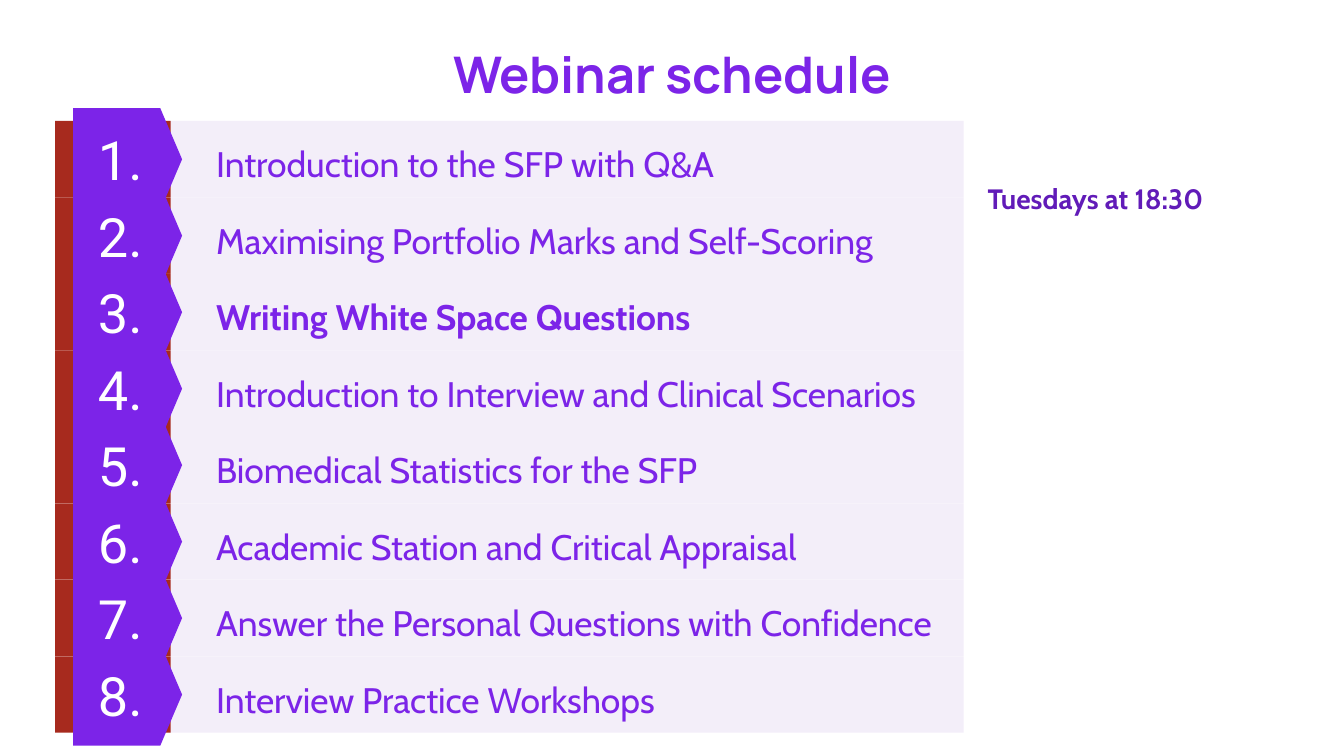
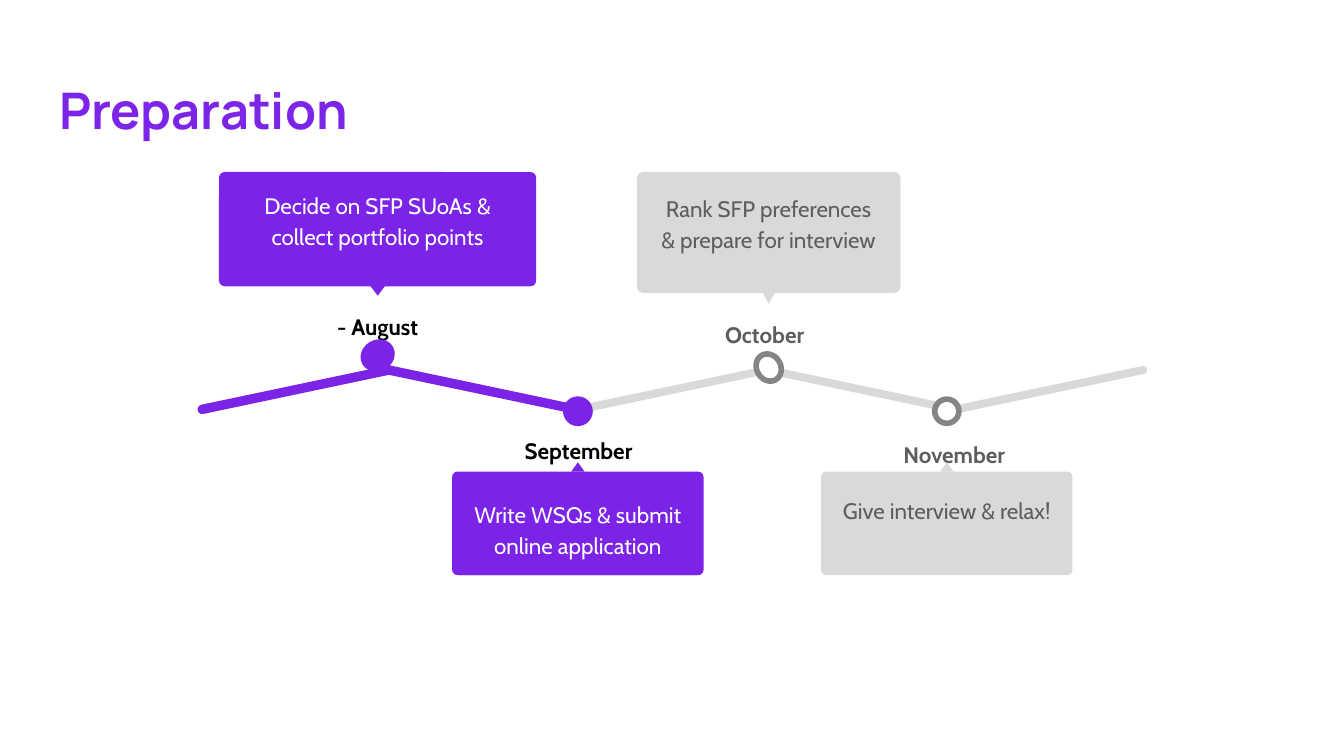
"""Build the webinar schedule and the preparation timeline slides."""
from pptx import Presentation
from pptx import util as u
from pptx.dml.color import RGBColor
from pptx.enum import shapes, text


class Theme:
    purple, accent, deep = "7C24E8", "7B23E7", "611BB8"
    pale, red, white = "F3EEF9", "A72A1E", "FFFFFF"
    light, ring, grey, black = "D9D9D9", "858585", "5E5E5E", "000000"
    head, body, digits = "Manrope", "Cabin", "Roboto"
    title_pt, number_pt, item_pt, note_pt, small_pt = 27, 29, 19, 15, 12


T = Theme
SHAPE = shapes.MSO_SHAPE
LEFT, CENTER = text.PP_ALIGN.LEFT, text.PP_ALIGN.CENTER
TOP, MIDDLE = text.MSO_ANCHOR.TOP, text.MSO_ANCHOR.MIDDLE

prs = Presentation()
prs.slide_width = u.Inches(10)
prs.slide_height = prs.slide_width * 9 // 16
UNIT = prs.slide_width / 100


def add(s, kind, col, row, cols, rows, fill=None, line=None, pt=0, rot=0):
    """Place a preset shape, or a text box when kind is None, on the grid."""
    at = [round(n * UNIT) for n in (col, row, cols, rows)]
    if kind is None:
        return s.shapes.add_textbox(*at)
    sp = s.shapes.add_shape(kind, *at)
    sp.shadow.inherit = False
    sp.rotation = rot
    sp.fill.solid()
    sp.fill.fore_color.rgb = RGBColor.from_string(fill)
    if line:
        sp.line.color.rgb = RGBColor.from_string(line)
        sp.line.width = u.Pt(pt)
    else:
        sp.line.fill.background()
    return sp


def write(sp, words, font, pt, color, bold=False, align=CENTER, anchor=TOP,
          spacing=None, after=None):
    """Fill a shape with one formatted paragraph."""
    tf = sp.text_frame
    tf.text = words
    tf.word_wrap = True
    tf.auto_size = text.MSO_AUTO_SIZE.NONE
    tf.vertical_anchor = anchor
    tf.margin_left = tf.margin_right = tf.margin_top = tf.margin_bottom = u.Inches(0.1)
    p = tf.paragraphs[0]
    p.alignment = align
    if spacing:
        p.line_spacing = spacing
    if after is not None:
        p.space_after = u.Pt(after)
    r = p.runs[0]
    r.font.name, r.font.size, r.font.bold = font, u.Pt(pt), bold
    r.font.color.rgb = RGBColor.from_string(color)


slides = []
for words, row, align in (("Webinar schedule", 2.2, CENTER), ("Preparation", 4.9, LEFT)):
    s = prs.slides.add_slide(prs.slide_layouts[5])
    sp = s.shapes.title
    sp.left, sp.top, sp.width, sp.height = [round(n * UNIT) for n in (3.4, row, 93.2, 6.8)]
    write(sp, words, T.head, T.title_pt, T.purple, True, align)
    slides.append(s)
schedule, preparation = slides

webinars = [
    "Introduction to the SFP with Q&A",
    "Maximising Portfolio Marks and Self-Scoring",
    "Writing White Space Questions",
    "Introduction to Interview and Clinical Scenarios",
    "Biomedical Statistics for the SFP",
    "Academic Station and Critical Appraisal",
    "Answer the Personal Questions with Confidence",
    "Interview Practice Workshops",
]
current = 2
first_row, pitch = 9, 5.69
for i in [*range(4, 8), *range(4)]:
    row = first_row + i * pitch
    add(schedule, SHAPE.RECTANGLE, 8, row, 63.7, pitch, T.pale)
    add(schedule, SHAPE.RECTANGLE, 4.1, row, 8.6, pitch, T.red)
    add(schedule, SHAPE.FLOWCHART_OFFPAGE_CONNECTOR, 5.7, row - 1.2, 7.6, 8.1, T.purple, rot=270)
    sp = add(schedule, SHAPE.RECTANGLE, 5.8, row + 0.7, 6.3, 4.3, T.purple)
    write(sp, f"{i + 1}.", T.digits, T.number_pt, T.white, anchor=MIDDLE)
    sp = add(schedule, None, 15.1, row + 0.1, 56.6, pitch)
    write(sp, webinars[i], T.body, T.item_pt, T.purple, i == current, LEFT, MIDDLE, 1.15, 12)

sp = add(schedule, None, 72.5, 12.5, 23.1, 5.7)
write(sp, "Tuesdays at 18:30", T.body, T.note_pt, T.deep, True, LEFT)

for col, tilt, done in ((70.7, -11.9, False), (56.7, 11.9, False), (42.7, -11.9, False),
                        (28.5, 11.9, True), (14.6, -11.9, True)):
    sp = add(preparation, SHAPE.ROUNDED_RECTANGLE, col, 28.7, 14.8, 0.6,
             T.accent if done else T.light, T.accent if done else None, 0.75, tilt % 360)
    sp.adjustments[0] = 0.5

months = [
    ("November", "Give interview & relax!", False, 70.45, (71, 31.5, 11.2, 3.7),
     (35.1, 18.7, 7.7), (35.7, 17.8, 6.8), (34.4, 1, 0.7, 0), (29.7, 1.8, 1.8)),
    ("October", "Rank SFP preferences & prepare for interview", False, 57.2, (56.9, 22.6, 8.6, 3.4),
     (12.8, 19.6, 9), (13.2, 18.6, 8), (21.7, 1, 0.9, 180), (26.3, 1.8, 2.1)),
    ("September", "Write WSQs & submit online application", True, 43, (43.05, 31.2, 10.5, 3.7),
     (35.1, 18.7, 7.7), (36, 17.8, 6.8), (34.4, 1, 0.7, 0), (29.7, 1.8, 1.8)),
    ("- August", "Decide on SFP SUoAs & collect portfolio points", True, 28.1, (28.1, 22, 9.6, 3.3),
     (12.8, 23.6, 8.5), (13, 22.4, 7), (21.2, 1.2, 0.8, 180), (25.5, 2.2, 1.9)),
]
for month, task, done, mid, label, card, body, pointer, dot in months:
    fill = T.accent if done else T.light
    label_mid, row, cols, rows = label
    sp = add(preparation, None, label_mid - cols / 2, row, cols, rows)
    write(sp, month, T.body, T.small_pt, T.black if done else T.grey, True, spacing=1.15, after=16)
    row, cols, rows = card
    sp = add(preparation, SHAPE.ROUNDED_RECTANGLE, mid - cols / 2, row, cols, rows, fill)
    sp.adjustments[0] = 0.05
    row, cols, rows, rot = pointer
    add(preparation, SHAPE.ISOSCELES_TRIANGLE, mid - cols / 2, row, cols, rows, fill, rot=rot)
    row, cols, rows = body
    sp = add(preparation, SHAPE.RECTANGLE if done else None, mid - cols / 2, row, cols, rows, fill)
    write(sp, task, T.body, T.small_pt, T.white if done else T.grey,
          spacing=1.15, after=16 if done else None)
    row, cols, rows = dot
    add(preparation, SHAPE.OVAL, mid - cols / 2, row, cols, rows,
        T.accent if done else T.white, T.accent if done else T.ring, 3, 330)

prs.save("out.pptx")
